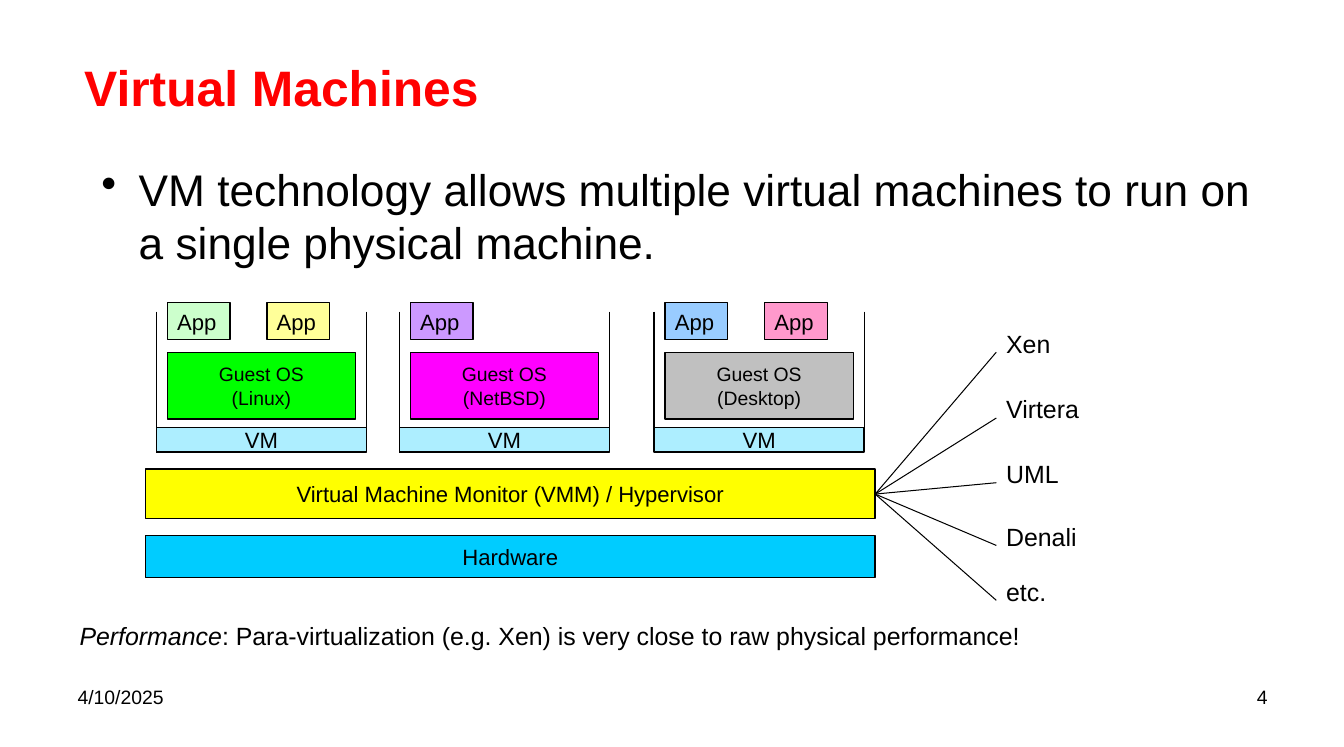
"""Build a slide on virtual machines with a hypervisor stack diagram."""
from lxml.etree import SubElement
from pptx import Presentation
from pptx.dml.color import RGBColor
from pptx.enum.shapes import MSO_CONNECTOR, MSO_SHAPE
from pptx.enum.text import MSO_ANCHOR, PP_ALIGN
from pptx.oxml.ns import qn
from pptx.util import Cm, Pt

BLACK = RGBColor(0x00, 0x00, 0x00)
RED = RGBColor(0xFF, 0x00, 0x00)
CYAN = RGBColor(0x00, 0xCC, 0xFF)
YELLOW = RGBColor(0xFF, 0xFF, 0x00)
GREEN = RGBColor(0x00, 0xFF, 0x00)
MAGENTA = RGBColor(0xFF, 0x00, 0xFF)
GRAY = RGBColor(0xC0, 0xC0, 0xC0)
PALE_GREEN = RGBColor(0xCC, 0xFF, 0xCC)
PALE_YELLOW = RGBColor(0xFF, 0xFF, 0x99)
LILAC = RGBColor(0xCC, 0x99, 0xFF)
PALE_BLUE = RGBColor(0x99, 0xCC, 0xFF)
PINK = RGBColor(0xFF, 0x99, 0xCC)

presentation = Presentation()
presentation.slide_width = Cm(34.29)
presentation.slide_height = Cm(19.05)
slide = presentation.slides.add_slide(presentation.slide_layouts[6])


def add_text(left, top, width, height, text, size, fill=None,
             align=PP_ALIGN.LEFT, anchor=MSO_ANCHOR.TOP, spacing=1.0):
    bounds = Cm(left), Cm(top), Cm(width), Cm(height)
    if fill is None:
        shape = slide.shapes.add_textbox(*bounds)
    else:
        shape = slide.shapes.add_shape(MSO_SHAPE.RECTANGLE, *bounds)
        shape.shadow.inherit = False
        shape.fill.solid()
        shape.fill.fore_color.rgb = fill
        shape.line.color.rgb = BLACK
        shape.line.width = Pt(1)
    frame = shape.text_frame
    frame.word_wrap = fill is None
    frame.vertical_anchor = anchor
    frame.text = text
    for paragraph in frame.paragraphs:
        paragraph.alignment = align
        paragraph.line_spacing = spacing
        paragraph.font.name = "Arial"
        paragraph.font.size = Pt(size)
        paragraph.font.color.rgb = BLACK
    return shape


def add_line(start_x, start_y, end_x, end_y, width):
    connector = slide.shapes.add_connector(
        MSO_CONNECTOR.STRAIGHT, Cm(start_x), Cm(start_y), Cm(end_x), Cm(end_y))
    connector.line.color.rgb = BLACK
    connector.line.width = Pt(width)
    SubElement(connector._element.spPr, qn("a:effectLst"))


add_text(1.73, 17.35, 8, 1.32, "4/10/2025", 14)
add_text(24.59, 17.35, 8, 1.32, "4", 14, align=PP_ALIGN.RIGHT)

title = add_text(1.9, 1.27, 32.23, 1.9, "Virtual Machines", 36, anchor=MSO_ANCHOR.MIDDLE)
title_font = title.text_frame.paragraphs[0].font
title_font.bold = True
title_font.color.rgb = RED

body = add_text(
    2.34, 4.01, 30.48, 3.2,
    "VM technology allows multiple virtual machines to run on a single physical machine.", 32)
bullet_properties = body.text_frame.paragraphs[0]._p.get_or_add_pPr()
bullet_properties.set("marL", str(Cm(0.95)))
bullet_properties.set("indent", str(-Cm(0.95)))
bullet = bullet_properties.makeelement(qn("a:buChar"), {"char": "•"})
bullet_properties.find(qn("a:defRPr")).addprevious(bullet)

for top, height, label, fill in [
    (13.66, 1.07, "Hardware", CYAN),
    (11.96, 1.27, "Virtual Machine Monitor (VMM) / Hypervisor", YELLOW),
]:
    add_text(3.71, top, 18.62, height, label, 16, fill, PP_ALIGN.CENTER, MSO_ANCHOR.MIDDLE, 1.02)

VM_WIDTH = 5.36
VM_TOP = 7.95
VM_BOTTOM = 11.53
machines = [
    (3.99, "Linux", GREEN, [PALE_GREEN, PALE_YELLOW]),
    (10.19, "NetBSD", MAGENTA, [LILAC]),
    (16.69, "Desktop", GRAY, [PALE_BLUE, PINK]),
]
for left, system, system_fill, app_fills in machines:
    right = left + VM_WIDTH
    add_text(left + 0.28, 8.99, 4.8, 1.7, f"Guest OS\n({system})", 14, system_fill,
             PP_ALIGN.CENTER, MSO_ANCHOR.MIDDLE, 1.02)
    add_line(left, VM_TOP, left, VM_BOTTOM, 1)
    add_line(right, VM_TOP, right, VM_BOTTOM, 1)
    add_line(left, VM_BOTTOM, right, VM_BOTTOM, 1)
    vm_bar = add_text(left, 10.9, VM_WIDTH, 0.63, "VM", 16, CYAN,
                      PP_ALIGN.CENTER, MSO_ANCHOR.MIDDLE, 1.02)
    fill_color = vm_bar._element.spPr.find(qn("a:solidFill"))[0]
    SubElement(fill_color, qn("a:alpha"), val="32000")
    for index, app_fill in enumerate(app_fills):
        add_text(left + 0.28 + 2.54 * index, 7.72, 1.6, 0.94, "App", 16, app_fill, spacing=1.02)

for top, product in [
    (8.33, "Xen"),
    (10.01, "Virtera"),
    (11.66, "UML"),
    (13.26, "Denali"),
    (14.66, "etc."),
]:
    add_text(25.42, top, 8.87, 1.3, product, 18, spacing=0.9)
    add_line(22.33, 12.6, 25.42, top + 0.65, 0.75)

note = add_text(1.78, 15.8, 32.5, 1.7, "Performance", 18, spacing=0.9)
note_paragraph = note.text_frame.paragraphs[0]
note_paragraph.runs[0].font.italic = True
note_paragraph.add_run().text = (
    ": Para-virtualization (e.g. Xen) is very close to raw physical performance!")

presentation.save("out.pptx")
